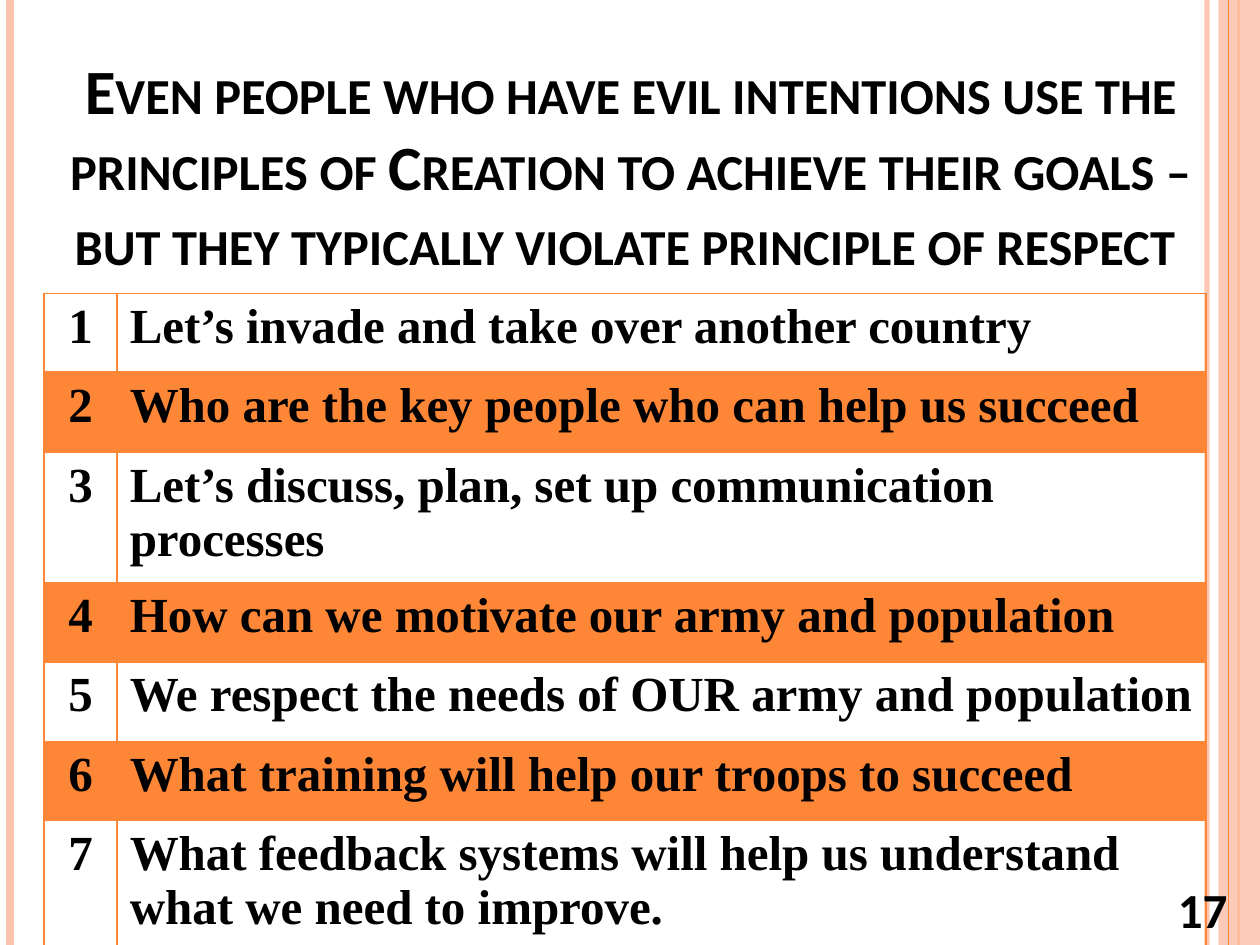
from dataclasses import dataclass

from lxml import etree
from pptx import Presentation
from pptx import util as u
from pptx.dml import color
from pptx.enum import shapes, text
from pptx.oxml import ns

ORANGE = color.RGBColor(0xFE, 0x86, 0x37)
PEACH = color.RGBColor(0xFE, 0xC3, 0xAE)
BLACK = color.RGBColor(0, 0, 0)

SLIDE_WIDTH, SLIDE_HEIGHT = 10, 7.5
COLUMN_WIDTHS = (0.58, 8.64)
ROW_HEIGHT, LAST_ROW_HEIGHT = 0.63, 1.14
TITLE = (
    "Even people who have evil intentions use the principles of Creation "
    "to achieve their goals – but they typically violate principle of respect "
)
STEPS = (
    "Let’s invade and take over another country",
    "Who are the key people who can help us succeed",
    "Let’s discuss, plan, set up communication processes",
    "How can we motivate our army and population",
    "We respect the needs of OUR army and population",
    "What training will help our troops to succeed",
    "What feedback systems will help us understand what we need to improve.",
)
HEADING_FORMAT = {"name": "Calibri", "size": u.Pt(36), "bold": True}
NUMBER_FORMAT = {"name": "Calibri", "size": u.Pt(28), "bold": True}
CELL_FORMAT = {"name": "Times New Roman", "size": u.Pt(28), "bold": True}


@dataclass
class Stripe:
    x: float
    rgb: color.RGBColor
    weight: float
    opacity: int = 100


LEFT_STRIPES = (
    Stripe(9.58, PEACH, 3, 93),
    Stripe(0.08, PEACH, 4.5),
    Stripe(9.83, ORANGE, 1.5),
)
FRONT_STRIPE = Stripe(9.75, ORANGE, 0.75)


def set_fill(fill, rgb: color.RGBColor, opacity: int = 100) -> None:
    fill.solid()
    fill.fore_color.rgb = rgb
    if opacity < 100:
        rgb_element = fill._xPr.find(".//" + ns.qn("a:srgbClr"))
        etree.SubElement(rgb_element, ns.qn("a:alpha"), val=str(opacity * 1000))


def draw_stripe(slide, stripe: Stripe) -> None:
    x = u.Inches(stripe.x)
    line = slide.shapes.add_connector(
        shapes.MSO_CONNECTOR.STRAIGHT, x, 0, x, u.Inches(SLIDE_HEIGHT)
    )
    line.line.width = u.Pt(stripe.weight)
    set_fill(line.line.fill, stripe.rgb, stripe.opacity)
    etree.SubElement(line._element.spPr, ns.qn("a:effectLst"))


def write(paragraph, words: str, font_format: dict, align):
    paragraph.alignment = align
    run = paragraph.add_run()
    run.text = words
    run.font.color.rgb = BLACK
    for name, value in font_format.items():
        setattr(run.font, name, value)
    return run


def add_label(slide, box: tuple, words: str, font_format: dict, anchor):
    shape = slide.shapes.add_textbox(*map(u.Inches, box))
    frame = shape.text_frame
    frame.word_wrap = True
    frame.vertical_anchor = anchor
    return write(frame.paragraphs[0], words, font_format, text.PP_ALIGN.CENTER)


def set_border(cell, side: str, weight: float) -> None:
    properties = cell._tc.get_or_add_tcPr()
    line = etree.SubElement(properties, ns.qn(f"a:ln{side}"), w=str(u.Pt(weight)))
    solid = etree.SubElement(line, ns.qn("a:solidFill"))
    etree.SubElement(solid, ns.qn("a:srgbClr"), val=str(ORANGE))


def add_steps(slide) -> None:
    heights = [ROW_HEIGHT] * (len(STEPS) - 1) + [LAST_ROW_HEIGHT]
    box = (0.35, 2.33, sum(COLUMN_WIDTHS), sum(heights))
    table = slide.shapes.add_table(
        len(STEPS), len(COLUMN_WIDTHS), *map(u.Inches, box)
    ).table
    table.first_row = table.horz_banding = False
    for column, width in zip(table.columns, COLUMN_WIDTHS):
        column.width = u.Inches(width)
    for index, (step, height) in enumerate(zip(STEPS, heights)):
        table.rows[index].height = u.Inches(height)
        contents = (
            (str(index + 1), text.PP_ALIGN.CENTER),
            (step, text.PP_ALIGN.LEFT),
        )
        for column_index, (words, align) in enumerate(contents):
            cell = table.cell(index, column_index)
            weights = {
                "L": 1,
                "R": 1,
                "T": 2 if index == 1 else 1,
                "B": 2 if index == 0 else 1,
            }
            for side, weight in weights.items():
                set_border(cell, side, weight)
            if index % 2:
                set_fill(cell.fill, ORANGE, 20)
            else:
                cell.fill.background()
            write(cell.text_frame.paragraphs[0], words, CELL_FORMAT, align)


def main() -> None:
    presentation = Presentation()
    presentation.slide_width = u.Inches(SLIDE_WIDTH)
    presentation.slide_height = u.Inches(SLIDE_HEIGHT)
    slide = presentation.slides.add_slide(presentation.slide_layouts[6])

    for stripe in LEFT_STRIPES:
        draw_stripe(slide, stripe)
    band = slide.shapes.add_shape(
        shapes.MSO_SHAPE.RECTANGLE,
        *map(u.Inches, (9.67, 0, 0.33, SLIDE_HEIGHT)),
    )
    band.shadow.inherit = False
    band.line.fill.background()
    set_fill(band.fill, PEACH, 87)
    draw_stripe(slide, FRONT_STRIPE)

    heading = add_label(
        slide, (0.2, 0.29, 9.61, 1.97), TITLE, HEADING_FORMAT, text.MSO_ANCHOR.BOTTOM
    )
    heading._r.get_or_add_rPr().set("cap", "small")
    add_steps(slide)
    add_label(
        slide, (9.09, 6.93, 0.91, 0.57), "17", NUMBER_FORMAT, text.MSO_ANCHOR.MIDDLE
    )
    presentation.save("out.pptx")


if __name__ == "__main__":
    main()
